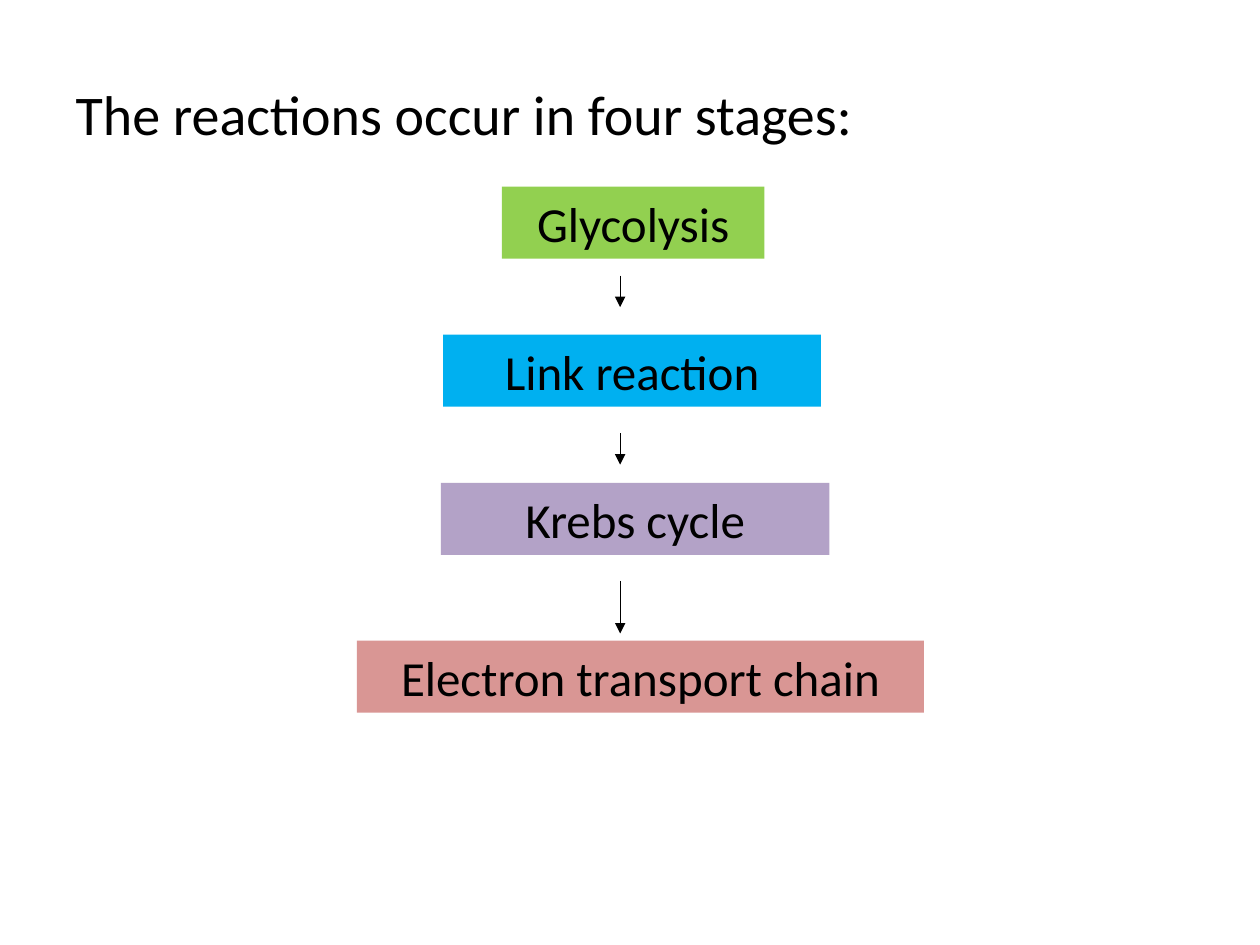
from lxml import etree
from pptx import Presentation
from pptx.dml.color import RGBColor
from pptx.enum.shapes import MSO_CONNECTOR, MSO_SHAPE
from pptx.enum.text import MSO_ANCHOR, MSO_AUTO_SIZE, PP_ALIGN
from pptx.oxml.ns import qn
from pptx.util import Pt

RECTANGLE = MSO_SHAPE.RECTANGLE
STRAIGHT = MSO_CONNECTOR.STRAIGHT
TOP, MIDDLE = MSO_ANCHOR.TOP, MSO_ANCHOR.MIDDLE
LEFT, CENTER = PP_ALIGN.LEFT, PP_ALIGN.CENTER
NO_AUTO_SIZE = MSO_AUTO_SIZE.NONE

BLACK = RGBColor(0x00, 0x00, 0x00)
GREEN = RGBColor(0x92, 0xD0, 0x50)
BLUE = RGBColor(0x00, 0xB0, 0xF0)
PURPLE = RGBColor(0xB3, 0xA2, 0xC7)
RED = RGBColor(0xD9, 0x96, 0x94)

BOX_HEIGHT = 41.2
ARROW_X = 354.4

# Label, fill, left, top, width
STAGES = [
    ("Glycolysis", GREEN, 286.8, 106.7, 150),
    ("Link reaction", BLUE, 253.2, 191.2, 216),
    ("Krebs cycle", PURPLE, 252, 275.9, 222),
    ("Electron transport chain", RED, 204, 366, 324),
]
# Top and bottom of each arrow
ARROWS = [(157.5, 175.5), (247.5, 265.5), (332, 362)]


class StageSlide:
    font_name = "Calibri"
    title_size = 32
    label_size = 28
    line_width = 0.75

    def __init__(self, presentation):
        self.slide = presentation.slides.add_slide(presentation.slide_layouts[5])

    def set_text(self, shape, text, size, alignment, anchor):
        frame = shape.text_frame
        frame.text = text
        frame.word_wrap = True
        frame.auto_size = NO_AUTO_SIZE
        frame.vertical_anchor = anchor
        paragraph = frame.paragraphs[0]
        paragraph.alignment = alignment
        font = paragraph.runs[0].font
        font.name = self.font_name
        font.size = Pt(size)
        font.color.rgb = BLACK

    def title(self, text, left, top, width, height):
        shape = self.slide.shapes.title
        shape.left, shape.top = Pt(left), Pt(top)
        shape.width, shape.height = Pt(width), Pt(height)
        self.set_text(shape, text, self.title_size, LEFT, TOP)

    def box(self, text, color, left, top, width):
        shape = self.slide.shapes.add_shape(
            RECTANGLE, Pt(left), Pt(top), Pt(width), Pt(BOX_HEIGHT))
        shape.shadow.inherit = False
        shape.fill.solid()
        shape.fill.fore_color.rgb = color
        shape.line.fill.background()
        self.set_text(shape, text, self.label_size, CENTER, MIDDLE)

    def down_arrow(self, x, top, bottom):
        connector = self.slide.shapes.add_connector(
            STRAIGHT, Pt(x), Pt(top), Pt(x), Pt(bottom))
        connector.line.color.rgb = BLACK
        connector.line.width = Pt(self.line_width)
        # Arrowhead at the lower end, no shadow
        properties = connector.element.spPr
        line = properties.find(qn("a:ln"))
        etree.SubElement(line, qn("a:tailEnd"), type="triangle")
        etree.SubElement(properties, qn("a:effectLst"))


def main():
    presentation = Presentation()
    presentation.slide_width, presentation.slide_height = Pt(720), Pt(540)
    stage_slide = StageSlide(presentation)

    # Heading
    stage_slide.title("The reactions occur in four stages:", 36, 42, 648, 50)

    # Stages from top to bottom
    for stage in STAGES:
        stage_slide.box(*stage)

    # Arrows between the stages
    for top, bottom in ARROWS:
        stage_slide.down_arrow(ARROW_X, top, bottom)

    presentation.save("out.pptx")


if __name__ == "__main__":
    main()
